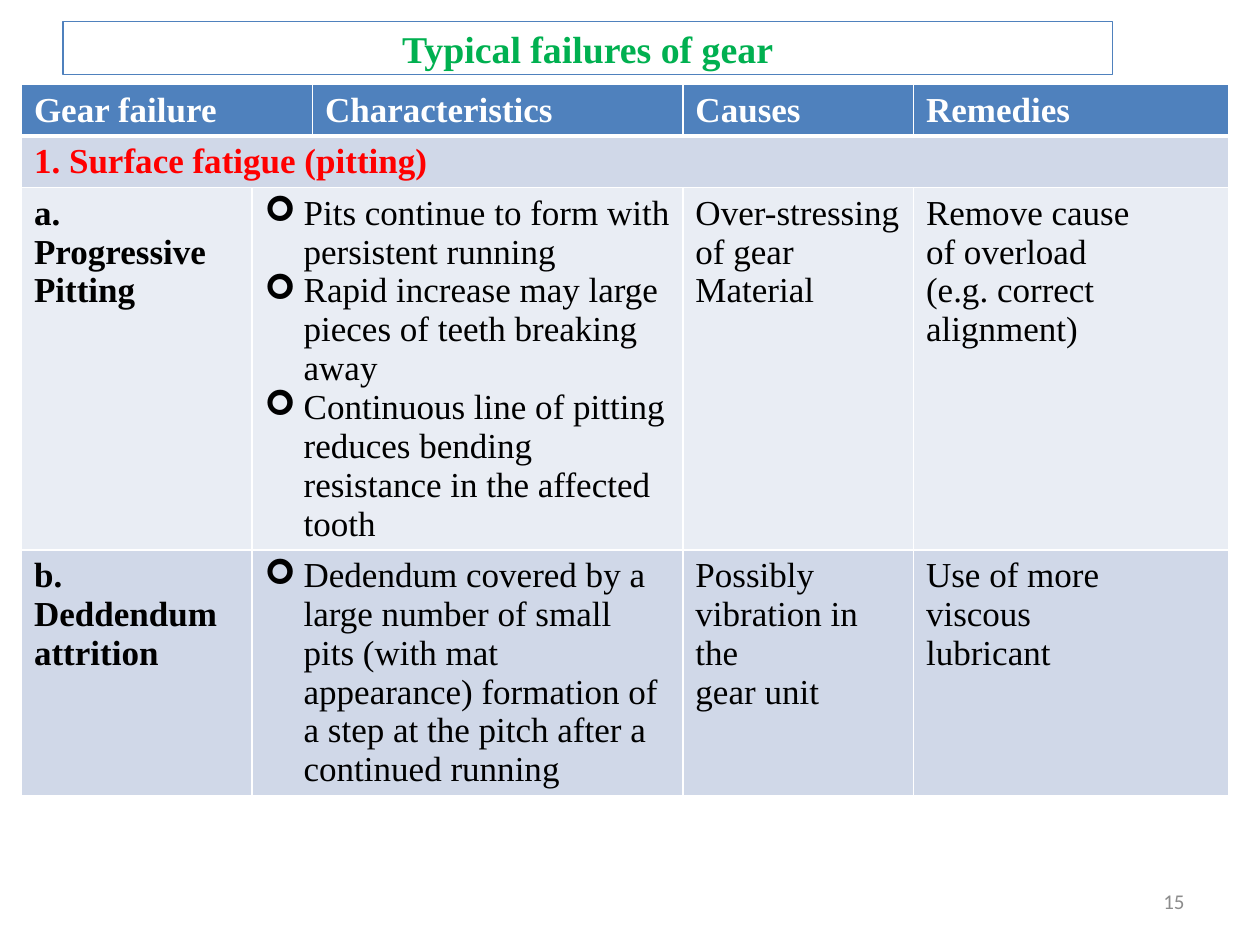
from dataclasses import dataclass

from lxml.etree import SubElement
from pptx import Presentation
from pptx.dml.color import RGBColor as Rgb
from pptx.enum.shapes import MSO_SHAPE as Preset
from pptx.enum.text import MSO_ANCHOR as Anchor, PP_ALIGN as Align
from pptx.oxml.ns import qn
from pptx.util import Inches, Pt


@dataclass(frozen=True)
class Theme:
    """Colours, fonts and type sizes of the slide."""
    serif: str = "Times New Roman"
    sans: str = "Calibri"
    title_size: float = 21.6
    table_size: float = 20
    number_size: float = 12
    accent: str = "4F81BD"
    band_dark: str = "D0D8E8"
    band_light: str = "E9EDF4"
    white: str = "FFFFFF"
    black: str = "000000"
    green: str = "00B050"
    red: str = "FF0000"
    grey: str = "8C8C8C"


THEME = Theme()
COLUMN_WIDTHS = (1.83, 0.48, 2.94, 1.83, 2.5)
ROW_HEIGHT = 0.41
HEADINGS = ("Gear failure", "Characteristics", "Causes", "Remedies")
FAILURES = (
    (
        ("a.", "Progressive Pitting"),
        (
            "Pits continue to form with persistent running",
            "Rapid increase may large pieces of teeth breaking away",
            "Continuous line of pitting reduces bending resistance in the affected tooth",
        ),
        ("Over-stressing of gear", "Material"),
        ("Remove cause", "of overload", "(e.g. correct", "alignment)"),
    ),
    (
        ("b. Deddendum", "attrition"),
        (
            "Dedendum covered by a large number of small pits (with mat appearance) "
            "formation of a step at the pitch after a continued running",
        ),
        ("Possibly vibration in the", "gear unit"),
        ("Use of more", "viscous", "lubricant"),
    ),
)


def add_bullet(paragraph):
    """Give a paragraph an arrowhead bullet with a hanging indent."""
    properties = paragraph._p.get_or_add_pPr()
    properties.set("marL", str(Inches(0.31)))
    properties.set("indent", str(-Inches(0.31)))
    SubElement(properties, qn("a:buFont"), typeface="Wingdings")
    SubElement(properties, qn("a:buChar"), char="➢")


def write_text(frame, lines, size=THEME.table_size, font=THEME.serif, color=THEME.black,
               bold=False, align=Align.LEFT, before=0, bullet=False):
    """Fill a text frame with one formatted paragraph per line."""
    frame.word_wrap = True
    for index, line in enumerate(lines):
        paragraph = frame.add_paragraph() if index else frame.paragraphs[0]
        paragraph.alignment = align
        paragraph.space_before = Pt(before)
        run = paragraph.add_run()
        run.text = line
        run.font.size, run.font.name, run.font.bold = Pt(size), font, bold
        run.font.color.rgb = Rgb.from_string(color)
        if bullet:
            add_bullet(paragraph)


def add_title(slide, title):
    """Add the outlined title bar."""
    bar = slide.shapes.add_shape(
        Preset.RECTANGLE, Inches(0.5), Inches(0.17), Inches(8.33), Inches(0.42))
    bar.shadow.inherit = False
    bar.fill.background()
    bar.line.color.rgb = Rgb.from_string(THEME.accent)
    bar.line.width = Pt(0.75)
    bar.text_frame.vertical_anchor = Anchor.MIDDLE
    write_text(bar.text_frame, [title], size=THEME.title_size, color=THEME.green,
               bold=True, align=Align.CENTER, before=4.3)


def style_cell(cell, fill, bottom=1):
    """Give a cell its white borders and its fill."""
    properties = cell._tc.get_or_add_tcPr()
    for side, width in (("L", 1), ("R", 1), ("T", 1), ("B", bottom)):
        border = SubElement(properties, qn(f"a:ln{side}"), w=str(Pt(width)))
        paint = SubElement(border, qn("a:solidFill"))
        SubElement(paint, qn("a:srgbClr"), val=THEME.white)
    cell.fill.solid()
    cell.fill.fore_color.rgb = Rgb.from_string(fill)


def add_failure_table(slide):
    """Add the table of gear failures."""
    bands = (THEME.accent, THEME.band_dark, THEME.band_light, THEME.band_dark)
    table = slide.shapes.add_table(
        len(bands), len(COLUMN_WIDTHS), Inches(0.17), Inches(0.67),
        Inches(sum(COLUMN_WIDTHS)), Inches(ROW_HEIGHT * len(bands))).table
    for column, width in zip(table.columns, COLUMN_WIDTHS):
        column.width = Inches(width)
    for row, fill in enumerate(bands):
        for cell in table.rows[row].cells:
            style_cell(cell, fill, bottom=1 if row else 3)

    table.cell(0, 0).merge(table.cell(0, 1))
    for column, heading in zip((0, 2, 3, 4), HEADINGS):
        write_text(table.cell(0, column).text_frame, [heading], color=THEME.white, bold=True)

    table.cell(1, 0).merge(table.cell(1, 4))
    write_text(table.cell(1, 0).text_frame, ["1. Surface fatigue (pitting)"],
               color=THEME.red, bold=True)

    for row, failure in enumerate(FAILURES, start=2):
        table.cell(row, 1).merge(table.cell(row, 2))
        for column, lines in zip((0, 1, 3, 4), failure):
            write_text(table.cell(row, column).text_frame, lines,
                       bold=column == 0, bullet=column == 1)


def add_page_number(slide, number):
    """Add the page number at the lower right."""
    page = slide.shapes.add_textbox(Inches(7.17), Inches(6.95), Inches(2.33), Inches(0.4))
    page.text_frame.vertical_anchor = Anchor.MIDDLE
    write_text(page.text_frame, [number], size=THEME.number_size, font=THEME.sans,
               color=THEME.grey, align=Align.RIGHT)


def main():
    """Build and save the slide."""
    deck = Presentation()
    deck.slide_width, deck.slide_height = Inches(10), Inches(7.5)
    slide = deck.slides.add_slide(deck.slide_layouts[6])
    add_title(slide, "Typical failures of gear")
    add_failure_table(slide)
    add_page_number(slide, "15")
    deck.save("out.pptx")


if __name__ == "__main__":
    main()
